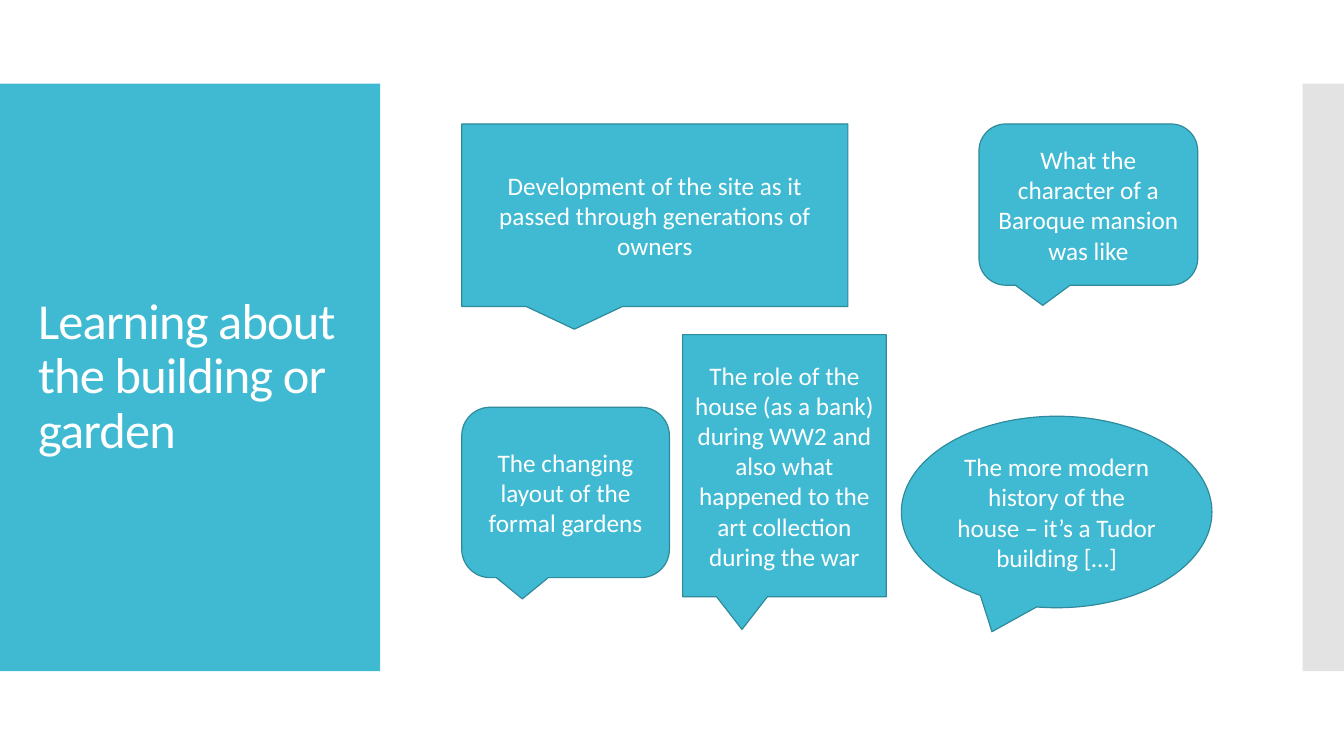
from lxml.etree import SubElement
from pptx import Presentation
from pptx.dml.color import RGBColor
from pptx.enum.shapes import MSO_SHAPE as Shape
from pptx.enum.text import MSO_ANCHOR as Anchor, PP_ALIGN as Align
from pptx.oxml.ns import qn
from pptx.util import Inches, Pt

COLORS = {"teal": "40BAD2", "outline": "2F8A9B", "grey": "C8C8C8", "white": "FFFFFF"}


class LearningSlide:
    font = "Calibri"

    def __init__(self, slide):
        self.shapes = slide.shapes

    def color(self, name):
        return RGBColor.from_string(COLORS[name])

    def block(self, kind, box, fill, outline=None, opacity=None):
        block = self.shapes.add_shape(kind, *map(Inches, box))
        block.shadow.inherit = False
        block.fill.solid()
        block.fill.fore_color.rgb = self.color(fill)
        if opacity is not None:
            tint = block.element.spPr.find(qn("a:solidFill"))[0]
            SubElement(tint, qn("a:alpha")).set("val", str(opacity * 1000))
        if outline:
            block.line.color.rgb = self.color(outline)
            block.line.width = Pt(0.85)
        else:
            block.line.fill.background()
        return block

    def add_words(self, holder, words, size, align):
        frame = holder.text_frame
        frame.word_wrap = True
        frame.vertical_anchor = Anchor.MIDDLE
        paragraph = frame.paragraphs[0]
        paragraph.alignment = align
        run = paragraph.add_run()
        run.text = words
        run.font.name = self.font
        run.font.size = Pt(size)
        run.font.color.rgb = self.color("white")
        return paragraph, run

    def title(self, box, words):
        heading = self.shapes.add_textbox(*map(Inches, box))
        paragraph, run = self.add_words(heading, words, 36, Align.LEFT)
        paragraph.line_spacing = 0.9
        run.font._element.set("spc", "-60")

    def callout(self, kind, box, words):
        bubble = self.block(kind, box, "teal", "outline")
        self.add_words(bubble, words, 18, Align.CENTER)


def main():
    deck = Presentation()
    deck.slide_width, deck.slide_height = Inches(13.33), Inches(7.5)
    learning = LearningSlide(deck.slides.add_slide(deck.slide_layouts[6]))

    learning.block(Shape.RECTANGLE, (0, 0.83, 3.77, 5.83), "teal")
    learning.block(Shape.RECTANGLE, (12.92, 0.83, 0.41, 5.83), "grey", opacity=50)
    learning.title((0.28, 1.23, 3.22, 5.03), "Learning about the building or garden")

    findings = [
        (Shape.RECTANGULAR_CALLOUT, (4.58, 1.23, 3.83, 1.81),
         "Development of the site as it passed through generations of owners"),
        (Shape.OVAL_CALLOUT, (8.94, 4.13, 3.08, 1.9),
         "The more modern history of the house – it’s a Tudor building […]"),
        (Shape.ROUNDED_RECTANGULAR_CALLOUT, (9.71, 1.23, 2.17, 1.6),
         "What the character of a Baroque mansion was like"),
        (Shape.ROUNDED_RECTANGULAR_CALLOUT, (4.58, 4.04, 2.06, 1.69),
         "The changing layout of the formal gardens"),
        (Shape.RECTANGULAR_CALLOUT, (6.77, 3.32, 2.02, 2.6),
         "The role of the house (as a bank) during WW2 and also what "
         "happened to the art collection during the war"),
    ]
    for kind, box, words in findings:
        learning.callout(kind, box, words)

    deck.save("out.pptx")


if __name__ == "__main__":
    main()
